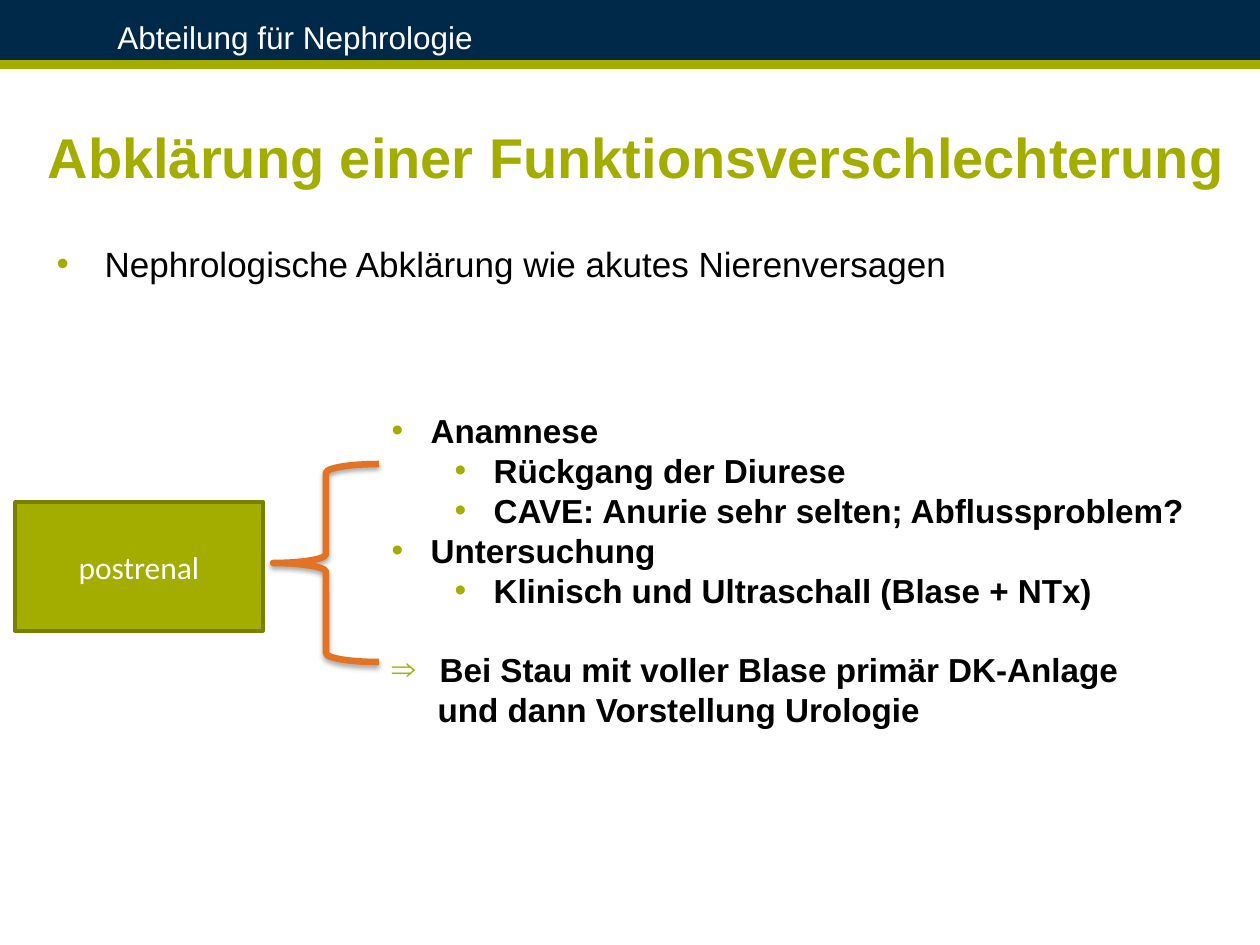
import pptx
import pptx.util
import pptx.dml.color
import pptx.enum.shapes
import pptx.enum.text
import pptx.oxml
import pptx.oxml.ns
import lxml.etree

COLORS = {"navy": "002848", "green": "A2AD00", "dark_green": "788000",
          "orange": "E37222", "white": "FFFFFF", "black": "000000"}
FORMATS = {
    "header": {"size": 18, "name": "Arial", "color": "white", "bold": False},
    "title": {"size": 32, "name": "Arial", "color": "green", "bold": True},
    "intro": {"size": 20, "name": "Arial", "color": "black", "bold": False},
    "list": {"size": 19, "name": "Arial", "color": "black", "bold": True},
    "cause": {"size": 18, "name": "Calibri", "color": "white", "bold": False},
}
BULLETS = {
    "intro": {"level": 0, "margin": 48, "hanging": 48, "sign": "•"},
    "topic": {"level": 0, "margin": 39, "hanging": 39, "sign": "•"},
    "detail": {"level": 1, "margin": 102, "hanging": 39, "sign": "•"},
    "result": {"level": 0, "margin": 48, "hanging": 48, "sign": "⇒"},
    "continued": {"level": 0, "margin": 46, "hanging": 0, "sign": None},
}
HEADER = "Abteilung für Nephrologie"
TITLE = "Abklärung einer Funktionsverschlechterung"
CAUSE = "postrenal"
INTRO = [("intro", "Nephrologische Abklärung wie akutes Nierenversagen")]
STEPS = [
    ("topic", "Anamnese"),
    ("detail", "Rückgang der Diurese"),
    ("detail", "CAVE: Anurie sehr selten; Abflussproblem?"),
    ("topic", "Untersuchung"),
    ("detail", "Klinisch und Ultraschall (Blase + NTx)"),
    ("result", "Bei Stau mit voller Blase primär DK-Anlage"),
    ("continued", "und dann Vorstellung Urologie"),
]
STEP_LINE = 22.8
WIDTH, HEIGHT = 1260, 945
SHAPES = pptx.enum.shapes.MSO_SHAPE
ANCHORS = pptx.enum.text.MSO_ANCHOR


def px(length):
    return pptx.util.Emu(length * 914400 // 126)


def rgb(name):
    return pptx.dml.color.RGBColor.from_string(COLORS[name])


def place(shape, box):
    for side, length in zip(("left", "top", "width", "height"), box):
        setattr(shape, side, px(length))


def style_line(line, color, width):
    line.color.rgb = rgb(color)
    line.width = pptx.util.Pt(width)


def add_shape(slide, kind, box, fill=None, line=None, width=0):
    shape = slide.shapes.add_shape(kind, *map(px, box))
    shape.shadow.inherit = False
    if fill:
        shape.fill.solid()
        shape.fill.fore_color.rgb = rgb(fill)
    else:
        shape.fill.background()
    if line:
        style_line(shape.line, line, width)
    else:
        shape.line.fill.background()
    return shape


def write(paragraph, text, style):
    run = paragraph.add_run()
    run.text = text
    values = FORMATS[style]
    run.font.color.rgb = rgb(values["color"])
    for name, value in (("size", pptx.util.Pt(values["size"])),
                        ("name", values["name"]), ("bold", values["bold"])):
        setattr(run.font, name, value)


def set_frame(frame, wrap=True, anchor=ANCHORS.TOP):
    for name, value in {"word_wrap": wrap, "vertical_anchor": anchor,
                        "auto_size": pptx.enum.text.MSO_AUTO_SIZE.NONE}.items():
        setattr(frame, name, value)


def add_bullet(paragraph, level, margin, hanging, sign):
    paragraph.level = level
    properties = paragraph._p.get_or_add_pPr()
    properties.set("marL", str(px(margin)))
    properties.set("indent", str(-px(hanging)))
    qn = pptx.oxml.ns.qn
    if sign:
        color = lxml.etree.SubElement(properties, qn("a:buClr"))
        lxml.etree.SubElement(color, qn("a:srgbClr"), val=COLORS["green"])
        lxml.etree.SubElement(properties, qn("a:buChar"), char=sign)
    else:
        lxml.etree.SubElement(properties, qn("a:buNone"))


def fill_list(shape, box, items, style, line_spacing=None):
    place(shape, box)
    frame = shape.text_frame
    set_frame(frame)
    for index, (kind, text) in enumerate(items):
        paragraph = frame.add_paragraph() if index else frame.paragraphs[0]
        add_bullet(paragraph, **BULLETS[kind])
        gap = line_spacing if kind == "result" else 0
        paragraph.space_before = pptx.util.Pt(gap)
        if line_spacing:
            paragraph.line_spacing = pptx.util.Pt(line_spacing)
        write(paragraph, text, style)


def add_shadow(shape):
    effects = shape._element.spPr.find(pptx.oxml.ns.qn("a:effectLst"))
    effects.append(pptx.oxml.parse_xml(
        f'<a:outerShdw {pptx.oxml.ns.nsdecls("a")} blurRad="{pptx.util.Pt(3.1)}" '
        f'dist="{pptx.util.Pt(1.8)}" dir="5400000" rotWithShape="0">'
        f'<a:srgbClr val="{COLORS["black"]}"><a:alpha val="35000"/></a:srgbClr>'
        '</a:outerShdw>'))


def main():
    presentation = pptx.Presentation()
    presentation.slide_width, presentation.slide_height = px(WIDTH), px(HEIGHT)
    slide = presentation.slides.add_slide(presentation.slide_layouts[3])
    title, intro, steps = slide.placeholders

    add_shape(slide, SHAPES.RECTANGLE, (0, 0, WIDTH, HEIGHT), "navy", "navy", 0.75)
    stripe = slide.shapes.add_connector(
        pptx.enum.shapes.MSO_CONNECTOR.STRAIGHT, *map(px, (0, 65, WIDTH, 65)))
    style_line(stripe.line, "green", 6)
    lxml.etree.SubElement(stripe._element.spPr, pptx.oxml.ns.qn("a:effectLst"))
    add_shape(slide, SHAPES.RECTANGLE, (0, 69, WIDTH, HEIGHT - 69), "white")

    header = slide.shapes.add_textbox(*map(px, (105, 12, 830, 40)))
    set_frame(header.text_frame)
    write(header.text_frame.paragraphs[0], HEADER, "header")

    place(title, (35, 116, 1211, 81))
    set_frame(title.text_frame, wrap=False)
    heading = title.text_frame.paragraphs[0]
    heading.alignment = pptx.enum.text.PP_ALIGN.LEFT
    write(heading, TITLE, "title")
    fill_list(intro, (44, 236, 1200, 60), INTRO, "intro")
    fill_list(steps, (379, 404, 860, 375), STEPS, "list", STEP_LINE)
    for placeholder in (intro, title, steps):
        slide.shapes._spTree.append(placeholder._element)

    cause = add_shape(slide, SHAPES.RECTANGLE, (15, 502, 248, 129),
                      "green", "dark_green", 2)
    set_frame(cause.text_frame, anchor=ANCHORS.MIDDLE)
    cause.text_frame.paragraphs[0].alignment = pptx.enum.text.PP_ALIGN.CENTER
    write(cause.text_frame.paragraphs[0], CAUSE, "cause")

    brace = add_shape(slide, SHAPES.LEFT_BRACE, (273, 464, 106, 198),
                      line="orange", width=3.75)
    add_shadow(brace)
    presentation.save("out.pptx")


if __name__ == "__main__":
    main()
